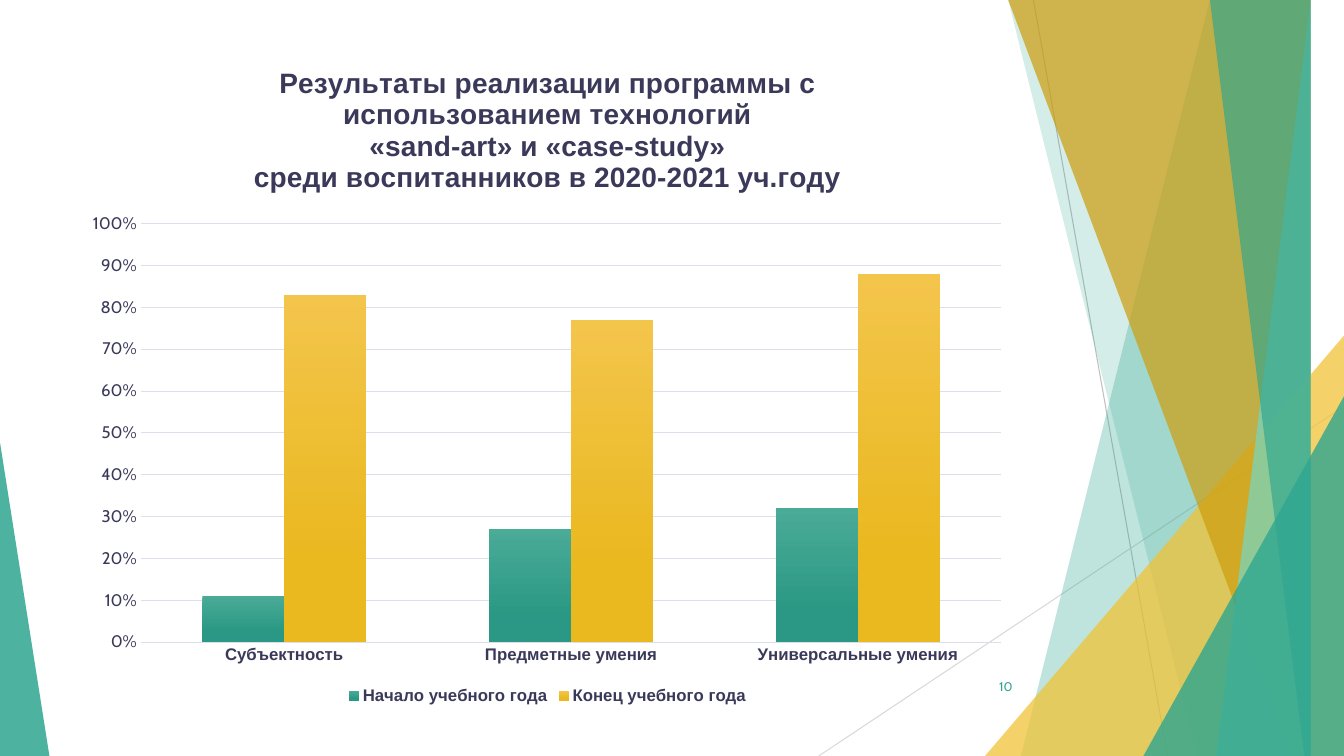
from lxml.etree import SubElement
from pptx import Presentation
from pptx.chart.data import CategoryChartData
from pptx.dml.color import RGBColor
from pptx.enum.chart import XL_CHART_TYPE as CT, XL_LEGEND_POSITION as LP, XL_TICK_MARK as TM
from pptx.enum.shapes import MSO_CONNECTOR as MC, MSO_SHAPE as MS
from pptx.enum.text import MSO_ANCHOR as MA, PP_ALIGN as PA
from pptx.oxml import parse_xml
from pptx.oxml.ns import nsdecls, qn
from pptx.util import Inches, Pt

INK = RGBColor(0x3A, 0x39, 0x59)
GRID = RGBColor(0xDE, 0xDE, 0xEA)
TEAL = RGBColor(0x2E, 0xA6, 0x90)
AQUA = RGBColor(0x73, 0xD8, 0xC6)
YELLOW = RGBColor(0xF2, 0xC2, 0x30)
OCHRE = RGBColor(0xCD, 0x9D, 0x0D)
GREY = RGBColor(0xBF, 0xBF, 0xBF)
PALE = RGBColor(0xD9, 0xD9, 0xD9)
START = RGBColor(0x4A, 0xAB, 0x97), RGBColor(0x2A, 0x98, 0x84)
END = RGBColor(0xF3, 0xC5, 0x4B), RGBColor(0xEA, 0xB8, 0x1F)
W, H = 13.33, 7.5

TITLE = ("Результаты реализации программы с использованием технологий",
         "«sand-art» и «case-study»",
         "среди воспитанников в 2020-2021 уч.году")
CATEGORIES = "Субъектность", "Предметные умения", "Универсальные умения"
SERIES = (("Начало учебного года", (0.11, 0.27, 0.32), START),
          ("Конец учебного года", (0.83, 0.77, 0.88), END))
BANDS_BACK = ((12.28, 10.04, TEAL, 30), (10.5, 11.83, TEAL, 20))
BANDS_FRONT = ((10.21, 12.91, OCHRE, 70), (13.03, 11.92, AQUA, 70),
               (11.96, 13.18, TEAL, 65))


def style_font(font, size=12, name="Arial", color=INK, bold=False):
    font.size, font.name, font.bold = Pt(size), name, bold
    font.color.rgb = color


def write(tf, lines, align, **style):
    for i, line in enumerate(lines):
        p = tf.add_paragraph() if i else tf.paragraphs[0]
        p.alignment = align
        r = p.add_run()
        r.text = line
        style_font(r.font, **style)


class SlideBuilder:
    def __init__(self, prs):
        self.s = prs.slides.add_slide(prs.slide_layouts[6])

    def line(self, x1, y1, x2, y2, color):
        c = self.s.shapes.add_connector(
            MC.STRAIGHT, Inches(x1), Inches(y1), Inches(x2), Inches(y2))
        c.line.color.rgb, c.line.width = color, Pt(0.75)
        SubElement(c._element.spPr, qn("a:effectLst"))

    def paint(self, sp, color, opacity):
        sp.shadow.inherit = False
        sp.line.fill.background()
        sp.fill.solid()
        sp.fill.fore_color.rgb = color
        clr = sp._element.spPr.find(qn("a:solidFill"))[0]
        SubElement(clr, qn("a:alpha"), val=str(opacity * 1000))

    def band(self, top, bottom, color, opacity):
        fb = self.s.shapes.build_freeform(top, 0, scale=Inches(1))
        fb.add_line_segments(((W, 0), (W, H), (bottom, H)))
        self.paint(fb.convert_to_shape(), color, opacity)

    def triangle(self, x, y, w, apex, color, opacity):
        sp = self.s.shapes.add_shape(
            MS.ISOSCELES_TRIANGLE, Inches(x), Inches(y), Inches(w), Inches(H - y))
        sp.adjustments[0] = apex
        self.paint(sp, color, opacity)

    def text(self, x, y, w, h, line, align, **style):
        tf = self.s.shapes.add_textbox(
            Inches(x), Inches(y), Inches(w), Inches(h)).text_frame
        tf.word_wrap, tf.vertical_anchor = True, MA.MIDDLE
        write(tf, [line], align, **style)

    def chart(self, x, y, w, h, title, categories, series):
        data = CategoryChartData(number_format="0%")
        data.categories = categories
        for name, values, _ in series:
            data.add_series(name, values)
        ch = self.s.shapes.add_chart(
            CT.COLUMN_CLUSTERED, Inches(x), Inches(y), Inches(w), Inches(h), data).chart
        style_font(ch.font, size=10, name="Cabin")
        write(ch.chart_title.text_frame, title, PA.CENTER, size=20, bold=True)
        ch.chart_title.include_in_layout = False

        ch.has_legend = True
        ch.legend.position, ch.legend.include_in_layout = LP.BOTTOM, False
        style_font(ch.legend.font, bold=True)

        cat, val = ch.category_axis, ch.value_axis
        for axis in (cat, val):
            axis.major_tick_mark = axis.minor_tick_mark = TM.NONE
        style_font(cat.tick_labels.font, bold=True)
        style_font(val.tick_labels.font, name="Cabin")
        val.minimum_scale, val.maximum_scale, val.major_unit = 0, 1, 0.1
        val.tick_labels.number_format = "0%"
        val.tick_labels.number_format_is_linked = False
        val.format.line.fill.background()
        for ln in (cat.format.line, val.major_gridlines.format.line):
            ln.color.rgb, ln.width = GRID, Pt(0.75)

        plot = ch.plots[0]
        plot.gap_width, plot.overlap, plot.vary_by_categories = 150, 0, False
        for ser, (_, _, colors) in zip(plot.series, series):
            fill = ser.format.fill
            fill.gradient()
            fill.gradient_angle = 270
            for stop, color, pos in zip(fill.gradient_stops, colors, (0, 0.78)):
                stop.color.rgb, stop.position = color, pos
        self.place_plot(ch, x=0.07, y=0.27, w=0.91, h=0.63)

    def place_plot(self, ch, **box):
        area = ch._chartSpace.chart.plotArea
        for old in area.findall(qn("c:layout")):
            area.remove(old)
        sizes = "".join(f'<c:{k} val="{v}"/>' for k, v in box.items())
        area.insert(0, parse_xml(
            f'<c:layout {nsdecls("c")}><c:manualLayout><c:layoutTarget val="inner"/>'
            f'<c:xMode val="edge"/><c:yMode val="edge"/>{sizes}'
            '</c:manualLayout></c:layout>'))


def main():
    prs = Presentation()
    prs.slide_width, prs.slide_height = Inches(W), Inches(H)
    b = SlideBuilder(prs)
    b.line(10.25, 0, 11.58, H, GREY)
    b.line(W, 4.03, 8.12, H, PALE)
    for band in BANDS_BACK:
        b.band(*band)
    b.triangle(9.77, 3.33, 3.56, 1, YELLOW, 72)
    for band in BANDS_FRONT:
        b.band(*band)
    b.triangle(11.34, 3.93, 1.99, 1, TEAL, 80)
    b.triangle(0, 4.39, 0.49, 0, TEAL, 85)
    b.text(9.39, 6.61, 0.75, 0.4, "10", PA.RIGHT, size=9, name="Cabin", color=TEAL)
    b.chart(0.74, 0.44, 9.38, 6.59, TITLE, CATEGORIES, SERIES)
    prs.save("out.pptx")


if __name__ == "__main__":
    main()
